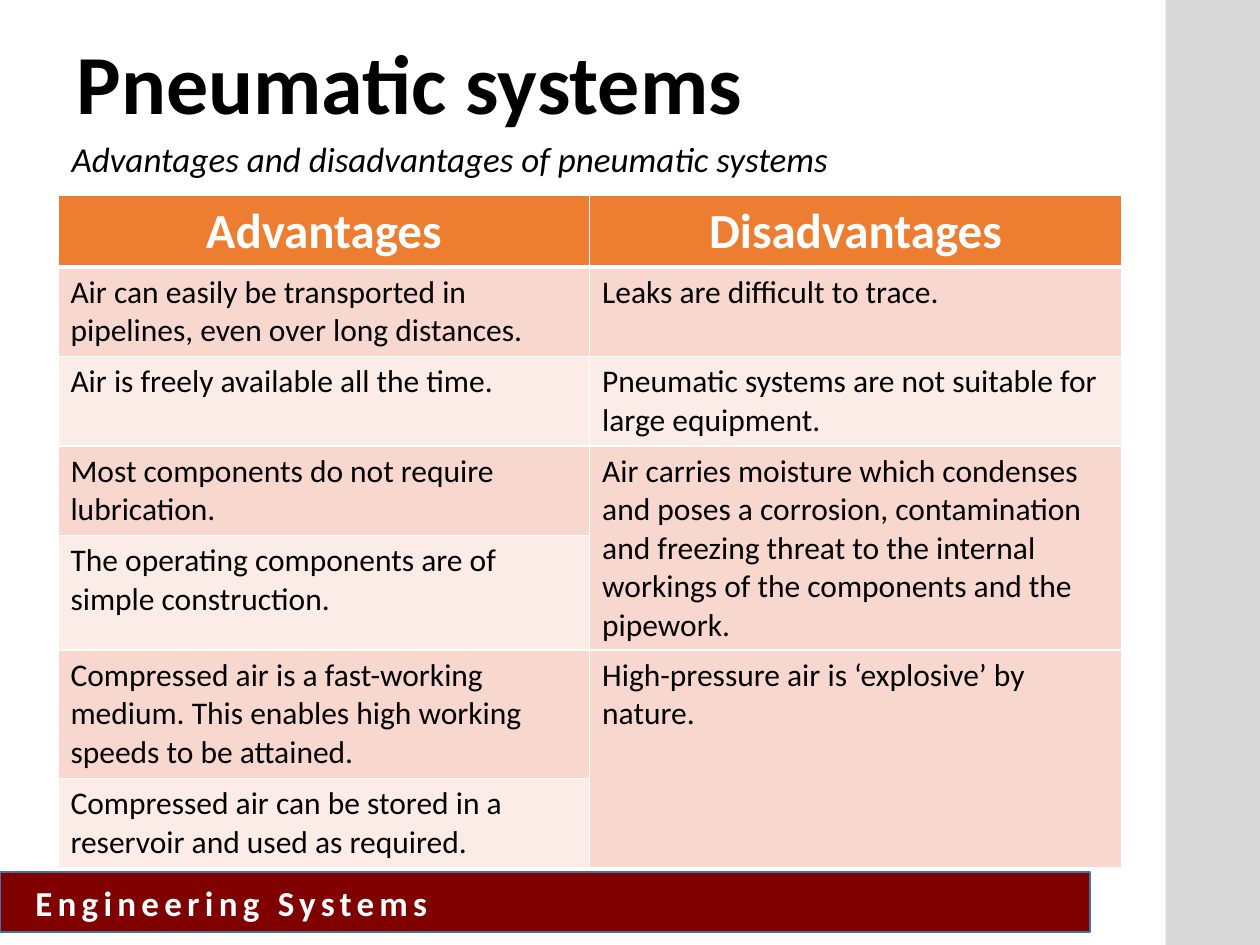
from lxml.etree import SubElement
from pptx import Presentation
from pptx.dml.color import RGBColor
from pptx.enum.shapes import MSO_SHAPE
from pptx.enum.text import MSO_ANCHOR, PP_ALIGN
from pptx.oxml.ns import qn
from pptx.util import Inches, Pt

COLORS = {
    "black": "000000", "white": "FFFFFF", "maroon": "800000", "edge": "43739E",
    "gray": "D9D9D9", "orange": "ED7D31", "dark": "F8D7CE", "light": "FCECE8",
}


def color(name):
    return RGBColor.from_string(COLORS[name])


class Deck:
    font = "Calibri"

    def __init__(self, width, height):
        self.prs = Presentation()
        self.prs.slide_width = Inches(width)
        self.prs.slide_height = Inches(height)
        self.slide = self.prs.slides.add_slide(self.prs.slide_layouts[6])

    def label(self, frame, text, size, ink="black", bold=False, italic=False,
              align=PP_ALIGN.LEFT):
        frame.text = text
        frame.word_wrap = True
        para = frame.paragraphs[0]
        para.alignment = align
        font = para.runs[0].font
        font.name, font.size = self.font, Pt(size)
        font.bold, font.italic = bold, italic
        font.color.rgb = color(ink)
        return para

    def text(self, box, text, size, **style):
        frame = self.slide.shapes.add_textbox(*map(Inches, box)).text_frame
        para = self.label(frame, text, size, **style)
        return frame, para

    def rect(self, box, fill, line=None):
        shape = self.slide.shapes.add_shape(MSO_SHAPE.RECTANGLE, *map(Inches, box))
        shape.shadow.inherit = False
        shape.fill.solid()
        shape.fill.fore_color.rgb = color(fill)
        if line:
            shape.line.color.rgb = color(line)
            shape.line.width = Pt(1)
        else:
            shape.line.fill.background()
        return shape

    def border(self, cell, top, bottom):
        props = cell._tc.get_or_add_tcPr()
        for side, width in (("L", 1), ("R", 1), ("T", top), ("B", bottom)):
            line = SubElement(props, qn(f"a:ln{side}"), w=str(Pt(width)))
            fill = SubElement(line, qn("a:solidFill"))
            SubElement(fill, qn("a:srgbClr"), val=COLORS["white"])

    def table(self, box, heads, rows, heights, spans):
        grid = [heads] + rows
        table = self.slide.shapes.add_table(
            len(grid), len(heads), *map(Inches, box)).table
        for row, height in zip(table.rows, heights):
            row.height = Inches(height)
        for r, texts in enumerate(grid):
            for c, text in enumerate(texts):
                cell = table.cell(r, c)
                self.border(cell, 3 if r == 1 else 1, 3 if r == 0 else 1)
                cell.fill.solid()
                tint = "orange" if r == 0 else "dark" if r % 2 else "light"
                cell.fill.fore_color.rgb = color(tint)
                if text and r == 0:
                    self.label(cell.text_frame, text, 28, "white", bold=True,
                               align=PP_ALIGN.CENTER)
                elif text:
                    self.label(cell.text_frame, text, 18)
        for r, c in spans:
            table.cell(r, c).merge(table.cell(r + 1, c))


def main():
    deck = Deck(10, 7.5)

    # Footer band and side strip
    band = deck.rect((0, 6.92, 8.65, 0.48), "maroon", "edge")
    frame = band.text_frame
    frame.margin_left = Inches(0.28)
    frame.vertical_anchor = MSO_ANCHOR.MIDDLE
    footer = deck.label(frame, "Engineering Systems", 20, "white", bold=True)
    footer.runs[0]._r.get_or_add_rPr().set("spc", "300")
    deck.rect((9.25, 0, 0.75, 7.5), "gray")

    # Title
    frame, title = deck.text((0.51, -0.03, 8.44, 1.45), "Pneumatic systems",
                             48, bold=True)
    frame.vertical_anchor = MSO_ANCHOR.MIDDLE
    title.line_spacing = 0.9

    # Comparison table; None marks a cell covered by the one above
    rows = [
        ("Air can easily be transported in pipelines, even over long distances.",
         "Leaks are difficult to trace."),
        ("Air is freely available all the time.",
         "Pneumatic systems are not suitable for large equipment."),
        ("Most components do not require lubrication.",
         "Air carries moisture which condenses and poses a corrosion, "
         "contamination and freezing threat to the internal workings of the "
         "components and the pipework."),
        ("The operating components are of simple construction.", None),
        ("Compressed air is a fast-working medium. This enables high working "
         "speeds to be attained.",
         "High-pressure air is ‘explosive’ by nature."),
        ("Compressed air can be stored in a reservoir and used as required.", None),
    ]
    heights = (0.57, 0.71, 0.71, 0.71, 0.91, 1.02, 0.71)
    deck.table((0.46, 1.55, 8.44, sum(heights)), ("Advantages", "Disadvantages"),
               rows, heights, spans=[(3, 1), (5, 1)])

    # Subtitle
    deck.text((0.47, 1.04, 7.45, 0.44),
              "Advantages and disadvantages of pneumatic systems", 20, italic=True)

    deck.prs.save("out.pptx")


if __name__ == "__main__":
    main()
